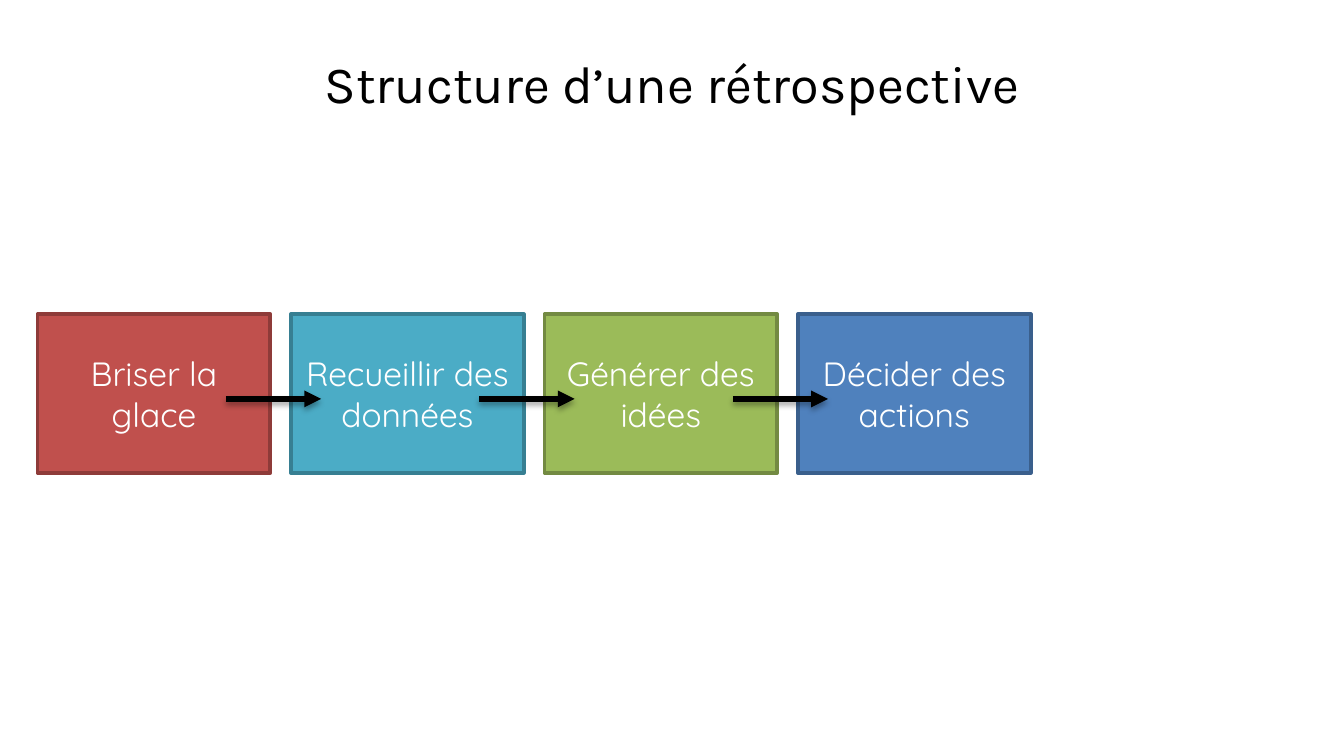
"""Build the slide showing the four steps of a retrospective."""
from lxml.etree import SubElement, fromstring
from pptx import Presentation
from pptx.dml.color import RGBColor
from pptx.enum.shapes import MSO_CONNECTOR, MSO_SHAPE
from pptx.enum.text import MSO_ANCHOR, PP_ALIGN
from pptx.oxml.ns import nsdecls, qn
from pptx.util import Cm, Pt

BLACK = RGBColor(0x00, 0x00, 0x00)
WHITE = RGBColor(0xFF, 0xFF, 0xFF)
RED, DARK_RED = RGBColor(0xC0, 0x50, 0x4D), RGBColor(0x8E, 0x3B, 0x39)
TEAL, DARK_TEAL = RGBColor(0x4B, 0xAC, 0xC6), RGBColor(0x37, 0x7F, 0x92)
GREEN, DARK_GREEN = RGBColor(0x9B, 0xBB, 0x59), RGBColor(0x73, 0x8A, 0x42)
BLUE, DARK_BLUE = RGBColor(0x4F, 0x81, 0xBD), RGBColor(0x3A, 0x5F, 0x8C)

STEPS = [
    ("Briser la glace", RED, DARK_RED),
    ("Recueillir des données", TEAL, DARK_TEAL),
    ("Générer des idées", GREEN, DARK_GREEN),
    ("Décider des actions", BLUE, DARK_BLUE),
]
STEP_PITCH = Cm(4.79)
ARROW_SHADOW = (
    f'<a:effectLst {nsdecls("a")}>'
    f'<a:outerShdw blurRad="{Pt(3.1)}" dist="{Pt(1.8)}" dir="5400000" rotWithShape="0">'
    '<a:srgbClr val="000000"><a:alpha val="35000"/></a:srgbClr>'
    '</a:outerShdw></a:effectLst>'
)


def write_text(shape, text, font_name, size, color):
    shape.text_frame.word_wrap = True
    paragraph = shape.text_frame.paragraphs[0]
    paragraph.text = text
    paragraph.alignment = PP_ALIGN.CENTER
    paragraph.font.name = font_name
    paragraph.font.size = Pt(size)
    paragraph.font.color.rgb = color


presentation = Presentation()
presentation.slide_width = Cm(25.4)
presentation.slide_height = Cm(14.29)
slide = presentation.slides.add_slide(presentation.slide_layouts[6])

title = slide.shapes.add_textbox(0, Cm(0.84), presentation.slide_width, Cm(0.97))
write_text(title, "Structure d’une rétrospective", "Karla", 28, BLACK)

for index, (label, fill_color, line_color) in enumerate(STEPS):
    step = slide.shapes.add_shape(
        MSO_SHAPE.RECTANGLE, Cm(0.71) + index * STEP_PITCH, Cm(5.94), Cm(4.4), Cm(3)
    )
    step.shadow.inherit = False
    step.fill.solid()
    step.fill.fore_color.rgb = fill_color
    step.line.color.rgb = line_color
    step.line.width = Pt(2)
    step.text_frame.vertical_anchor = MSO_ANCHOR.MIDDLE
    write_text(step, label, "Quicksand", 18, WHITE)

for index in range(len(STEPS) - 1):
    start = Cm(4.27) + index * STEP_PITCH
    arrow = slide.shapes.add_connector(
        MSO_CONNECTOR.STRAIGHT, start, Cm(7.54), start + Cm(1.8), Cm(7.54)
    )
    arrow.line.color.rgb = BLACK
    arrow.line.width = Pt(3)
    SubElement(arrow.line._get_or_add_ln(), qn("a:tailEnd"), type="triangle")
    arrow._element.spPr.append(fromstring(ARROW_SHADOW))

presentation.save("out.pptx")
